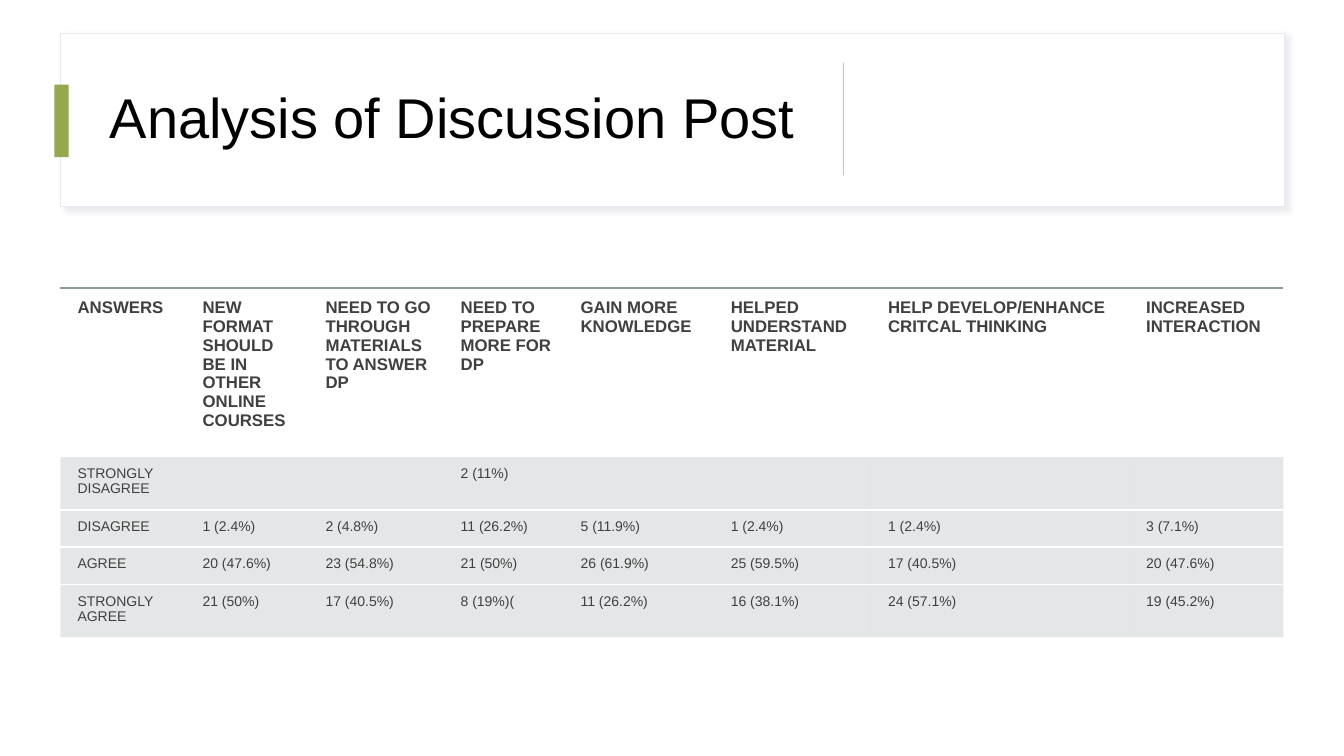
"""Build the slide that tabulates the discussion post answers."""
from dataclasses import dataclass
from typing import Optional

from lxml import etree
from pptx import Presentation, util as u
from pptx.dml.color import RGBColor
from pptx.enum import shapes, text
from pptx.oxml.ns import qn


@dataclass(frozen=True)
class Theme:
    """Colours, font and type sizes."""
    font: str = "Arial"
    title: str = "000000"
    body: str = "404040"
    white: str = "FFFFFF"
    frame: str = "E5E9F0"
    shadow: str = "BEBCCA"
    accent: str = "94A84E"
    divider: str = "BDC8DB"
    band: str = "B4BCBE"
    table_top: str = "8F9A9D"
    title_size: int = 40
    header_size: int = 12
    body_size: int = 10


@dataclass(frozen=True)
class Box:
    """A filled rectangle, in inches."""
    left: float
    top: float
    width: float
    height: float
    fill: str
    line: Optional[str] = None
    shadow: Optional[str] = None


THEME = Theme()
BOXES = [
    Box(0.6, 0.33, 12.14, 1.72, THEME.white, THEME.frame, THEME.shadow),
    Box(0.54, 0.84, 0.14, 0.72, THEME.accent),
    Box(8.36, 0.62, 0.01, 1.12, THEME.divider),
]
COL_WIDTHS = [1.24, 1.22, 1.34, 1.19, 1.49, 1.56, 2.56, 1.53]
ROW_HEIGHTS = [1.67, 0.53, 0.37, 0.37, 0.53]
ROWS = [
    ["ANSWERS", "NEW FORMAT SHOULD BE IN OTHER ONLINE COURSES",
     "NEED TO GO THROUGH MATERIALS TO ANSWER DP", "NEED TO PREPARE MORE FOR DP",
     "GAIN MORE KNOWLEDGE", "HELPED UNDERSTAND MATERIAL",
     "HELP DEVELOP/ENHANCE CRITCAL THINKING", "INCREASED INTERACTION"],
    ["STRONGLY DISAGREE", "", "", "2 (11%)", "", "", "", ""],
    ["DISAGREE", "1 (2.4%)", "2 (4.8%)", "11 (26.2%)", "5 (11.9%)", "1 (2.4%)",
     "1 (2.4%)", "3 (7.1%)"],
    ["AGREE", "20 (47.6%)", "23 (54.8%)", "21 (50%)", "26 (61.9%)", "25 (59.5%)",
     "17 (40.5%)", "20 (47.6%)"],
    ["STRONGLY AGREE", "21 (50%)", "17 (40.5%)", "8 (19%)(", "11 (26.2%)",
     "16 (38.1%)", "24 (57.1%)", "19 (45.2%)"],
]
NO_GRID_STYLE = "{2D5ABB26-0587-4C30-8999-92F81FD0307C}"


def add_colour(parent, colour: str, alpha: int = 100) -> None:
    """Append an RGB colour element with an opacity in percent."""
    clr = etree.SubElement(parent, qn("a:srgbClr"), val=colour)
    if alpha < 100:
        etree.SubElement(clr, qn("a:alpha"), val=str(alpha * 1000))


def add_run(p, words: str, size: int, colour: str, bold: bool = False) -> None:
    """Append a formatted run to a paragraph."""
    r = p.add_run()
    r.text = words
    r.font.name = THEME.font
    r.font.size = u.Pt(size)
    r.font.bold = bold
    r.font.color.rgb = RGBColor.from_string(colour)


def add_box(slide, box: Box) -> None:
    """Draw a rectangle with its optional outline and shadow."""
    sp = slide.shapes.add_shape(
        shapes.MSO_SHAPE.RECTANGLE, u.Inches(box.left), u.Inches(box.top),
        u.Inches(box.width), u.Inches(box.height))
    sp.shadow.inherit = False
    sp.fill.solid()
    sp.fill.fore_color.rgb = RGBColor.from_string(box.fill)
    if box.line:
        sp.line.color.rgb = RGBColor.from_string(box.line)
        sp.line.width = u.Pt(1)
    else:
        sp.line.fill.background()
    if box.shadow:
        effects = sp._element.spPr.find(qn("a:effectLst"))
        shadow = etree.SubElement(
            effects, qn("a:outerShdw"), blurRad=str(u.Pt(4)), dist=str(u.Pt(3)),
            dir=str(45 * 60000), algn="tl", rotWithShape="0")
        add_colour(shadow, box.shadow, 30)


def add_title(slide, words: str) -> None:
    """Add the slide title."""
    sp = slide.shapes.add_textbox(
        u.Inches(0.99), u.Inches(0.44), u.Inches(7.03), u.Inches(1.5))
    tf = sp.text_frame
    tf.word_wrap = True
    tf.vertical_anchor = text.MSO_ANCHOR.MIDDLE
    p = tf.paragraphs[0]
    p.line_spacing = 0.9
    add_run(p, words, THEME.title_size, THEME.title)


def add_border(cell, side: str, colour: str) -> None:
    """Draw one side of a cell."""
    ln = etree.SubElement(cell._tc.get_or_add_tcPr(), qn(f"a:{side}"),
                          w=str(u.Pt(1.5)))
    add_colour(etree.SubElement(ln, qn("a:solidFill")), colour)


def format_cell(cell, words: str, header: bool) -> None:
    """Fill in and style one table cell."""
    inset = u.Inches(0.1 if header else 0.09)
    cell.margin_left = u.Inches(0.17)
    cell.margin_right = cell.margin_top = cell.margin_bottom = inset
    if words:
        size = THEME.header_size if header else THEME.body_size
        add_run(cell.text_frame.paragraphs[0], words, size, THEME.body, header)
    if header:
        add_border(cell, "lnT", THEME.table_top)
        cell.fill.background()
        return
    for side in ("lnT", "lnB"):
        add_border(cell, side, THEME.white)
    fill = etree.SubElement(cell._tc.get_or_add_tcPr(), qn("a:solidFill"))
    add_colour(fill, THEME.band, 35)


def add_answers(slide) -> None:
    """Add the table of answers."""
    sp = slide.shapes.add_table(
        len(ROWS), len(COL_WIDTHS), u.Inches(0.6), u.Inches(2.86),
        u.Inches(sum(COL_WIDTHS)), u.Inches(sum(ROW_HEIGHTS)))
    table = sp.table
    table.horz_banding = False
    table._tbl.tblPr.find(qn("a:tableStyleId")).text = NO_GRID_STYLE
    for column, width in zip(table.columns, COL_WIDTHS):
        column.width = u.Inches(width)
    for i, (row, height) in enumerate(zip(table.rows, ROW_HEIGHTS)):
        row.height = u.Inches(height)
        for cell, words in zip(row.cells, ROWS[i]):
            format_cell(cell, words, i == 0)


def main() -> None:
    """Build and save the presentation."""
    prs = Presentation()
    prs.slide_width, prs.slide_height = u.Inches(13.33), u.Inches(7.5)
    slide = prs.slides.add_slide(prs.slide_layouts[6])
    for box in BOXES:
        add_box(slide, box)
    add_title(slide, "Analysis of Discussion Post")
    add_answers(slide)
    prs.save("out.pptx")


if __name__ == "__main__":
    main()
